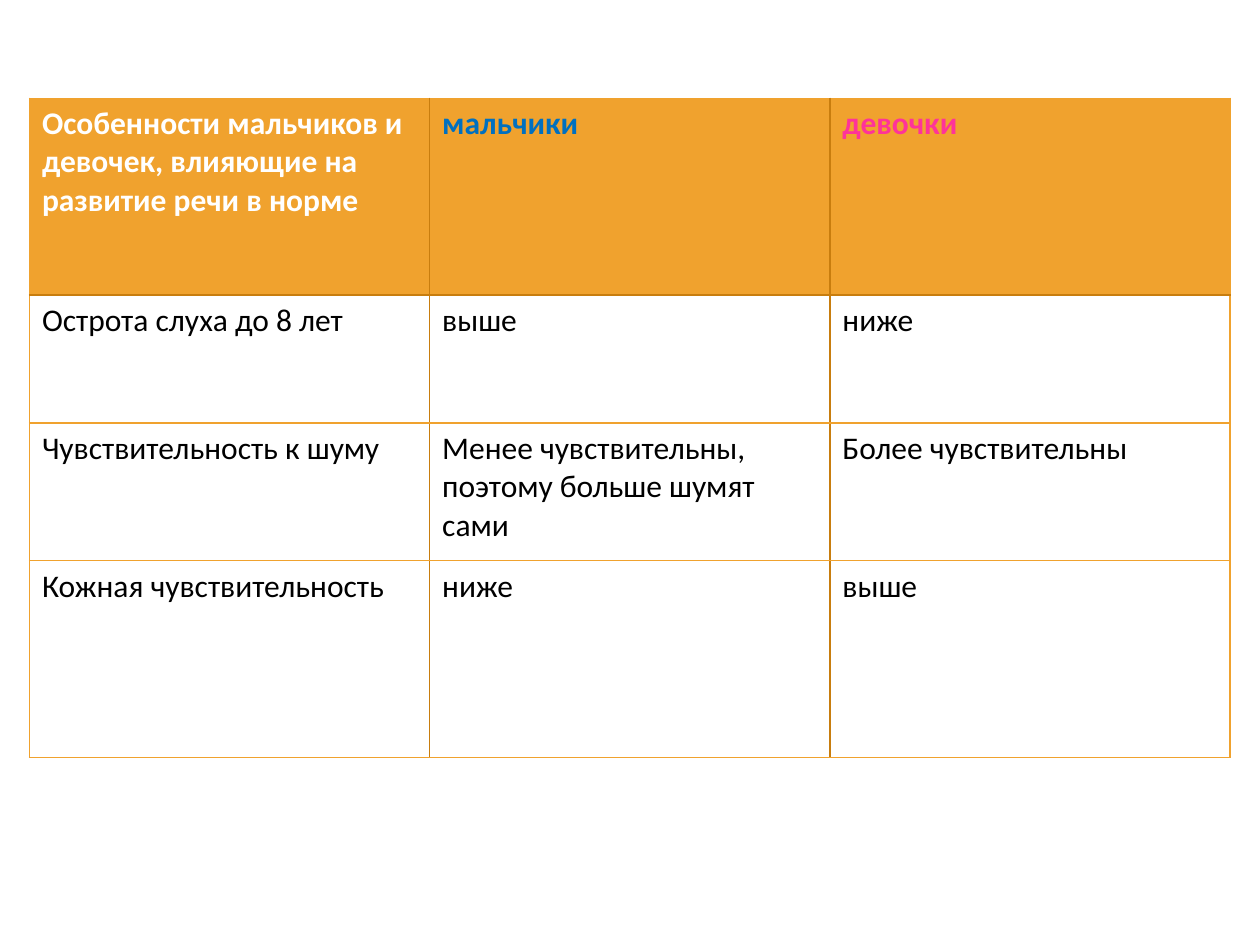
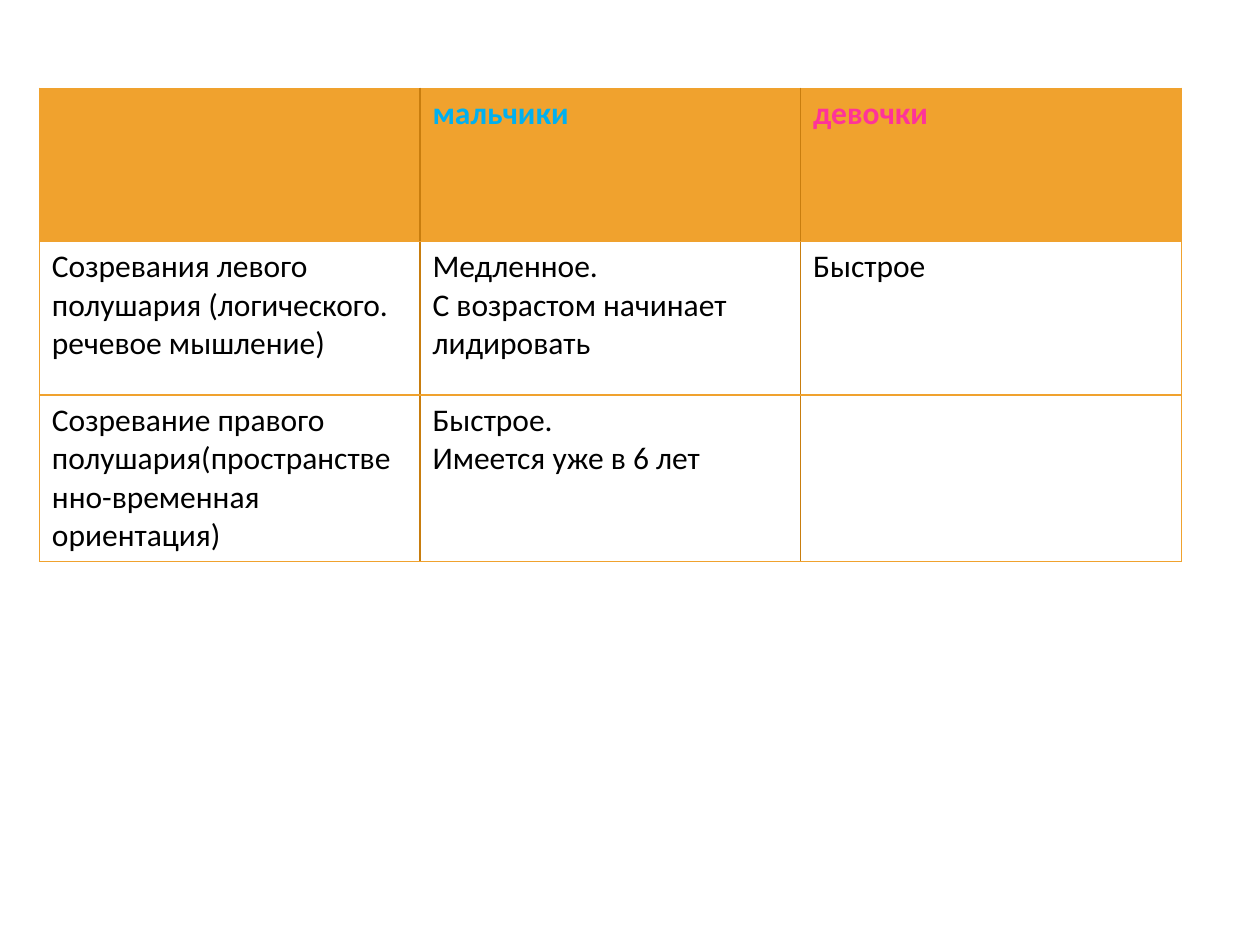
from lxml.etree import SubElement
from pptx import Presentation
from pptx.dml.color import RGBColor
from pptx.oxml.ns import qn
from pptx.util import Pt

# Shared look
FONT = "Calibri"
SIZE = 18
ORANGE = "F0A22E"
BROWN = "C87D0E"
WHITE = "FFFFFF"
BLACK = "000000"
PINK = "FF3399"
THIN = (ORANGE, 0.79)
DARK = (BROWN, 1)


def paint(target, color):
    target.rgb = RGBColor.from_string(color)


def set_edges(cell, edges):
    """Draw the left, right, top and bottom lines of a cell."""
    props = cell._tc.get_or_add_tcPr()
    for side, (color, width) in zip("LRTB", edges):
        line = SubElement(props, qn(f"a:ln{side}"), w=str(int(Pt(width))))
        fill = SubElement(line, qn("a:solidFill"))
        SubElement(fill, qn("a:srgbClr"), val=color)


def fill_cell(cell, text, color, head):
    if head:
        cell.fill.solid()
        paint(cell.fill.fore_color, ORANGE)
    else:
        cell.fill.background()
    cell.text_frame.text = text
    for para in cell.text_frame.paragraphs:
        para.font.size = Pt(SIZE)
        for run in para.runs:
            run.font.name = FONT
            run.font.size = Pt(SIZE)
            run.font.bold = head
            paint(run.font.color, color)


def add_grid(slide, left, top, width, heights, rows, heads, rule):
    """Add a table; heads colours the header text, rule underlines it."""
    count = len(heads)
    frame = slide.shapes.add_table(len(rows), count, Pt(left), Pt(top),
                                   Pt(width * count), Pt(sum(heights)))
    table = frame.table
    table.horz_banding = False
    for col in table.columns:
        col.width = Pt(width)
    for r, (height, texts) in enumerate(zip(heights, rows)):
        table.rows[r].height = Pt(height)
        for c, text in enumerate(texts):
            cell = table.cell(r, c)
            set_edges(cell, (
                DARK if c else THIN,
                DARK if c < count - 1 else THIN,
                rule if r == 1 else THIN,
                rule if r == 0 else THIN,
            ))
            fill_cell(cell, text, BLACK if r else heads[c], r == 0)


def main():
    deck = Presentation()
    deck.slide_width, deck.slide_height = Pt(720), Pt(540)
    blank = deck.slide_layouts[6]

    # Hearing, noise and touch
    senses = [
        ("Особенности мальчиков и девочек, влияющие на развитие речи в норме",
         "мальчики", "девочки"),
        ("Острота слуха до 8 лет", "выше", "ниже"),
        ("Чувствительность к шуму",
         "Менее чувствительны, поэтому больше шумят сами",
         "Более чувствительны"),
        ("Кожная чувствительность", "ниже", "выше"),
    ]
    add_grid(deck.slides.add_slide(blank), 16.8, 56.1, 228.7,
             (112.5, 73.2, 78.7, 112.5), senses,
             (WHITE, "0070C0", PINK), DARK)

    # Growth of the two halves of the brain
    brain = [
        ("", "мальчики", "девочки"),
        ("Созревания левого полушария (логического. речевое мышление)",
         "Медленное.\nС возрастом начинает лидировать", "Быстрое"),
        ("Созревание правого "
         "полушария(пространственно-временная ориентация)",
         "Быстрое.\nИмеется уже в 6 лет", ""),
    ]
    add_grid(deck.slides.add_slide(blank), 22.5, 50.4, 217.5,
             (87.7, 87.7, 87.7), brain, (WHITE, "00B0F0", PINK), THIN)

    deck.save("out.pptx")


if __name__ == "__main__":
    main()
